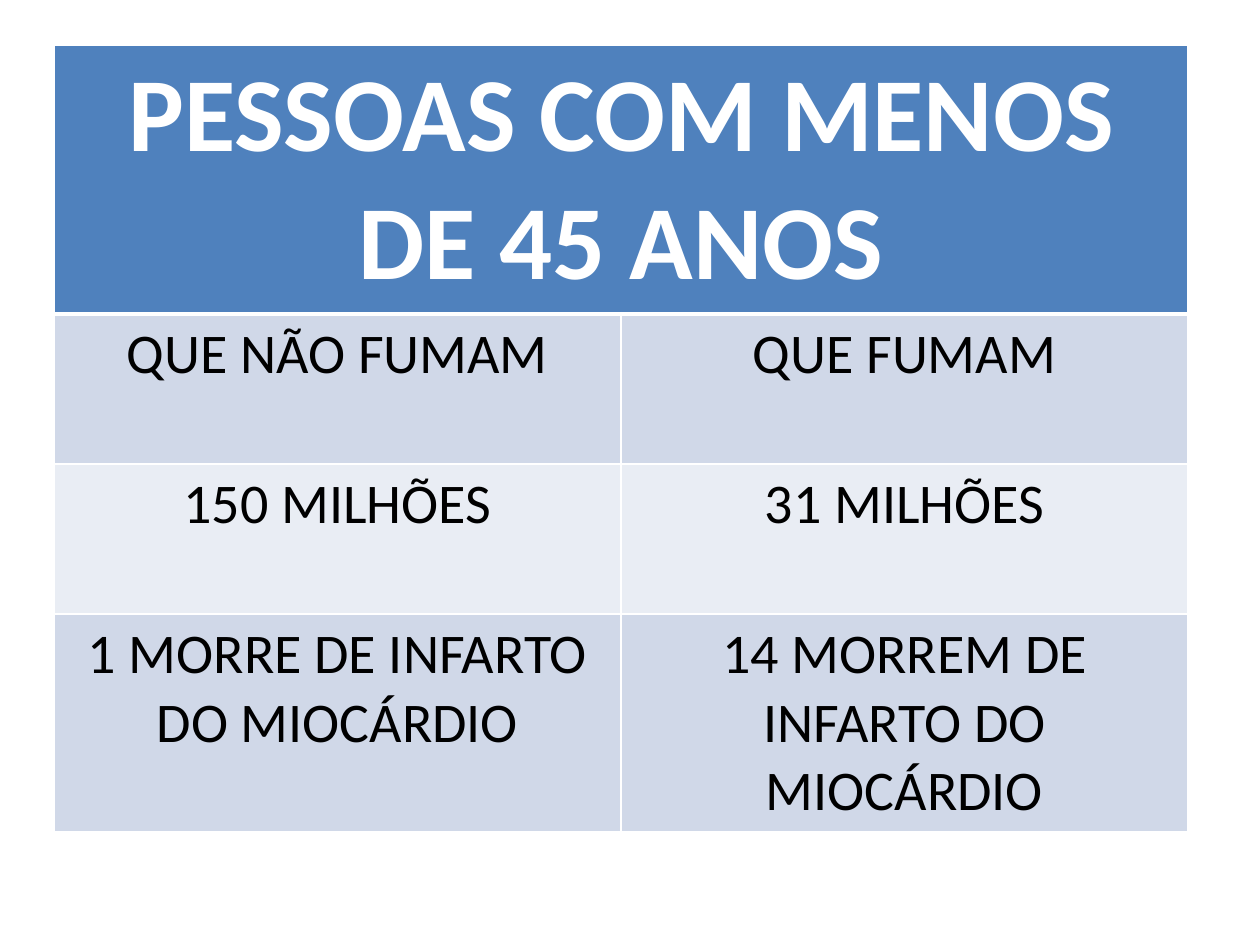
from lxml import etree
from pptx import Presentation
from pptx.dml.color import RGBColor
from pptx.enum.text import PP_ALIGN
from pptx.oxml.ns import qn
from pptx.util import Inches, Pt

CENTER = PP_ALIGN.CENTER
WHITE = "FFFFFF"


def color(code):
    return RGBColor.from_string(code)


def edge(cell, sides):
    props = cell._tc.get_or_add_tcPr()
    for i, (side, width) in enumerate(sides.items()):
        line = etree.Element(qn("a:ln" + side), w=str(Pt(width)))
        fill = etree.SubElement(line, qn("a:solidFill"))
        etree.SubElement(fill, qn("a:srgbClr"), val=WHITE)
        props.insert(i, line)


deck = Presentation()
deck.slide_width = Inches(10)
deck.slide_height = Inches(7.5)
slide = deck.slides.add_slide(deck.slide_layouts[6])

rows = [
    ("PESSOAS COM MENOS DE 45 ANOS", ""),
    ("QUE NÃO FUMAM", "QUE FUMAM"),
    ("150 MILHÕES", "31 MILHÕES"),
    ("1 MORRE DE INFARTO DO MIOCÁRDIO", "14 MORREM DE INFARTO DO MIOCÁRDIO"),
]
fills = ["4F81BD", "D0D8E8", "E9EDF4", "D0D8E8"]
heights = [2.12, 1.19, 1.19, 1.72]

frame = slide.shapes.add_table(
    len(rows), 2, Inches(0.43), Inches(0.36), Inches(9), Inches(sum(heights)))
table = frame.table
for col in table.columns:
    col.width = Inches(4.5)
table.cell(0, 0).merge(table.cell(0, 1))

for r, texts in enumerate(rows):
    table.rows[r].height = Inches(heights[r])
    head = r == 0
    for c, text in enumerate(texts):
        cell = table.cell(r, c)
        cell.fill.solid()
        cell.fill.fore_color.rgb = color(fills[r])
        edge(cell, {"L": 1, "R": 1, "T": 3 if r == 1 else 1, "B": 3 if head else 1})
        if cell.is_spanned:
            continue
        para = cell.text_frame.paragraphs[0]
        para.alignment = CENTER
        run = para.add_run()
        run.text = text
        run.font.name = "Calibri"
        run.font.size = Pt(60 if head else 32)
        run.font.bold = head
        run.font.color.rgb = color(WHITE if head else "000000")

deck.save("out.pptx")
